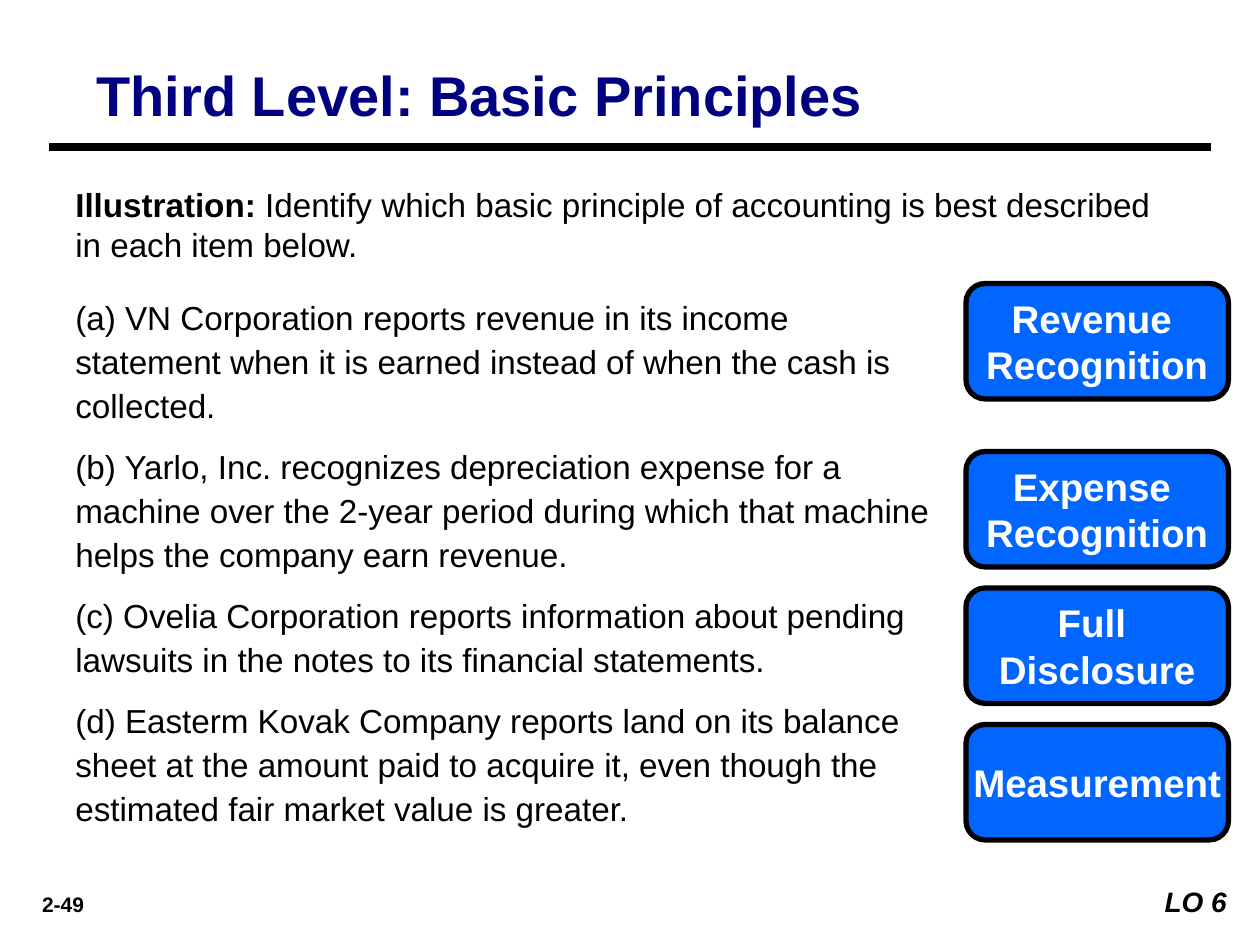
from dataclasses import dataclass

from lxml.etree import SubElement
from pptx import Presentation
from pptx.dml.color import RGBColor
from pptx.enum.shapes import MSO_CONNECTOR as Connector, MSO_SHAPE as Shape
from pptx.enum.text import MSO_ANCHOR as Anchor, PP_ALIGN as Align
from pptx.oxml.ns import qn
from pptx.util import Pt

COLORS = {"ink": "000000", "title": "000080", "answer": "0066FF", "paper": "FFFFFF"}
FONT = "Arial"


@dataclass(frozen=True)
class Box:
    left: float
    top: float
    width: float
    height: float

    def lengths(self) -> tuple:
        return Pt(self.left), Pt(self.top), Pt(self.width), Pt(self.height)


@dataclass(frozen=True)
class Style:
    size: float
    color: str = "ink"
    bold: bool = False
    italic: bool = False


@dataclass(frozen=True)
class Answer:
    top: float
    lines: tuple


BODY = Style(19)
LEAD = Style(19, bold=True)
ANSWER = Style(22, "paper", bold=True)

ITEMS = (
    "(a) VN Corporation reports revenue in its income statement when it is earned "
    "instead of when the cash is collected.",
    "(b) Yarlo, Inc. recognizes depreciation expense for a machine over the 2-year "
    "period during which that machine helps the company earn revenue.",
    "(c) Ovelia Corporation reports information about pending lawsuits in the notes "
    "to its financial statements.",
    "(d) Easterm Kovak Company reports land on its balance sheet at the amount paid "
    "to acquire it, even though the estimated fair market value is greater.",
)
ANSWERS = (
    Answer(162, ("Revenue ", "Recognition")),
    Answer(258, ("Expense ", "Recognition")),
    Answer(336, ("Full ", "Disclosure")),
    Answer(414, ("Measurement",)),
)


def rgb(name: str) -> RGBColor:
    return RGBColor.from_string(COLORS[name])


def add_run(paragraph, text: str, style: Style) -> None:
    run = paragraph.add_run()
    run.text = text
    font = run.font
    font.name, font.size = FONT, Pt(style.size)
    font.bold, font.italic = style.bold, style.italic
    font.color.rgb = rgb(style.color)


def write(frame, paragraphs, align=Align.LEFT, spacing=1.0, after=0) -> None:
    for index, runs in enumerate(paragraphs):
        paragraph = frame.add_paragraph() if index else frame.paragraphs[0]
        paragraph.alignment = align
        paragraph.line_spacing = spacing
        paragraph.space_before, paragraph.space_after = Pt(0), Pt(after)
        for text, style in runs:
            add_run(paragraph, text, style)


def add_text(slide, box: Box, paragraphs, **layout) -> None:
    frame = slide.shapes.add_textbox(*box.lengths()).text_frame
    frame.word_wrap = True
    write(frame, paragraphs, **layout)


def add_title(slide, box: Box, text: str) -> None:
    title = slide.shapes.title
    title.left, title.top, title.width, title.height = box.lengths()
    title.text_frame.vertical_anchor = Anchor.MIDDLE
    write(title.text_frame, [[(text, Style(32, "title", bold=True))]])


def add_rule(slide, left: float, right: float, y: float) -> None:
    rule = slide.shapes.add_connector(
        Connector.STRAIGHT, Pt(left), Pt(y), Pt(right), Pt(y)
    )
    rule.line.color.rgb = rgb("ink")
    rule.line.width = Pt(4.5)
    SubElement(rule.element.spPr, qn("a:effectLst"))


def add_panel(slide, kind: Shape, box: Box, fill: str):
    panel = slide.shapes.add_shape(kind, *box.lengths())
    panel.shadow.inherit = False
    panel.fill.solid()
    panel.fill.fore_color.rgb = rgb(fill)
    return panel


def add_answer(slide, answer: Answer) -> None:
    box = Box(552, answer.top, 150, 66)
    panel = add_panel(slide, Shape.FLOWCHART_ALTERNATE_PROCESS, box, "answer")
    panel.line.color.rgb = rgb("ink")
    panel.line.width = Pt(3)
    panel.text_frame.word_wrap = False
    panel.text_frame.vertical_anchor = Anchor.MIDDLE
    write(panel.text_frame, [[(line, ANSWER)] for line in answer.lines], Align.CENTER)


def add_objective(slide, box: Box, text: str) -> None:
    objective = add_panel(slide, Shape.RECTANGLE, box, "paper")
    objective.line.fill.background()
    objective.text_frame.vertical_anchor = Anchor.TOP
    write(objective.text_frame, [[(text, Style(16, bold=True, italic=True))]], Align.RIGHT)


def main() -> None:
    deck = Presentation()
    deck.slide_width, deck.slide_height = Pt(720), Pt(540)
    slide = deck.slides.add_slide(deck.slide_layouts.get_by_name("Title Only"))

    add_title(slide, Box(48, 32, 648, 44), "Third Level: Basic Principles")
    add_rule(slide, 28, 692, 84)
    instruction = (
        " Identify which basic principle of accounting is best described "
        "in each item below."
    )
    add_text(
        slide, Box(36, 102, 648, 53), [[("Illustration:", LEAD), (instruction, BODY)]]
    )
    add_text(
        slide, Box(36, 164, 504, 318), [[(item, BODY)] for item in ITEMS],
        spacing=1.1, after=10,
    )
    for answer in ANSWERS:
        add_answer(slide, answer)
    add_text(
        slide, Box(6, 506, 60, 22), [[("2-49", Style(12, bold=True))]], align=Align.CENTER
    )
    add_objective(slide, Box(648, 502, 60, 27), "LO 6")

    deck.save("out.pptx")


if __name__ == "__main__":
    main()
